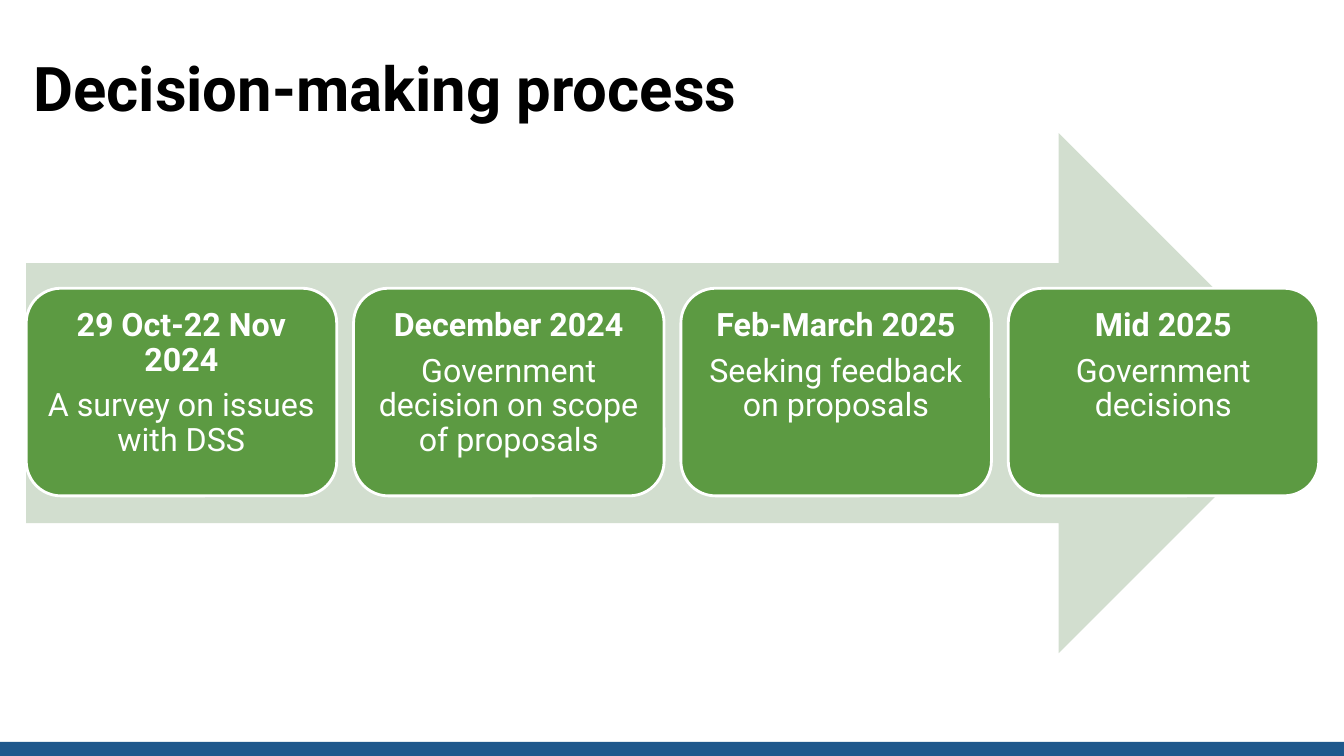
from pptx import Presentation
from pptx import util as u
from pptx.dml import color
from pptx.enum import shapes, text

STEPS = [
    ("29 Oct-22 Nov 2024", "A survey on issues with DSS"),
    ("December 2024", "Government decision on scope of proposals"),
    ("Feb-March 2025", "Seeking feedback on proposals"),
    ("Mid 2025", "Government decisions"),
]


def rgb(value):
    return color.RGBColor.from_string(value)


def write(para, content, font="Roboto", size=23, fill="FFFFFF", bold=False,
          align=text.PP_ALIGN.LEFT, spacing=1.0, after=0):
    para.alignment = align
    para.line_spacing = spacing
    para.space_after = u.Pt(after)
    span = para.add_run()
    span.text = content
    span.font.name = font
    span.font.size = u.Pt(size)
    span.font.bold = bold
    span.font.color.rgb = rgb(fill)


class SlideBuilder:
    BLUE, PALE, GREEN = "1F588C", "D2DECF", "5C9A42"
    WHITE, BLACK = "FFFFFF", "000000"

    def __init__(self, page):
        self.page = page

    def frame(self, box, inset_x, inset_y):
        frame = box.text_frame
        frame.word_wrap = True
        frame.vertical_anchor = text.MSO_ANCHOR.TOP
        frame.margin_left = frame.margin_right = u.Inches(inset_x)
        frame.margin_top = frame.margin_bottom = u.Inches(inset_y)
        return frame

    def shape(self, kind, left, top, width, height, fill, line=None):
        shape = self.page.shapes.add_shape(
            kind, u.Inches(left), u.Inches(top), u.Inches(width), u.Inches(height))
        shape.shadow.inherit = False
        shape.fill.solid()
        shape.fill.fore_color.rgb = rgb(fill)
        if line:
            shape.line.color.rgb = rgb(line)
            shape.line.width = u.Pt(2)
        else:
            shape.line.fill.background()
        return shape

    def title(self, content, left, top, width, height):
        box = self.page.shapes.add_textbox(
            u.Inches(left), u.Inches(top), u.Inches(width), u.Inches(height))
        frame = self.frame(box, 0.07, 0.09)
        write(frame.paragraphs[0], content, size=44, fill=self.BLACK, bold=True)

    def card(self, date, action, left, top, width, height):
        card = self.shape(shapes.MSO_SHAPE.ROUNDED_RECTANGLE, left, top, width, height,
                          self.GREEN, line=self.WHITE)
        frame = self.frame(card, 0.1, 0.1)
        style = dict(fill=self.WHITE, align=text.PP_ALIGN.CENTER, spacing=0.9, after=8)
        write(frame.paragraphs[0], date, bold=True, **style)
        write(frame.add_paragraph(), action, **style)


def main():
    deck = Presentation()
    deck.slide_width, deck.slide_height = u.Inches(13.33), u.Inches(7.5)
    builder = SlideBuilder(deck.slides.add_slide(deck.slide_layouts[6]))
    left, width = 0.26, 12.82

    # Footer band and title
    builder.shape(shapes.MSO_SHAPE.RECTANGLE, 0, 7.36, 13.33, 0.14, builder.BLUE)
    builder.title("Decision-making process", left, 0.41, width, 0.71)

    # Timeline arrow
    builder.shape(shapes.MSO_SHAPE.RIGHT_ARROW, left, 1.32, width, 5.16, builder.PALE)

    # Step cards, spread evenly along the arrow
    card_width = 3.08
    pitch = (width - card_width) / (len(STEPS) - 1)
    for index, (date, action) in enumerate(STEPS):
        builder.card(date, action, left + index * pitch, 2.86, card_width, 2.06)

    deck.save("out.pptx")


if __name__ == "__main__":
    main()
